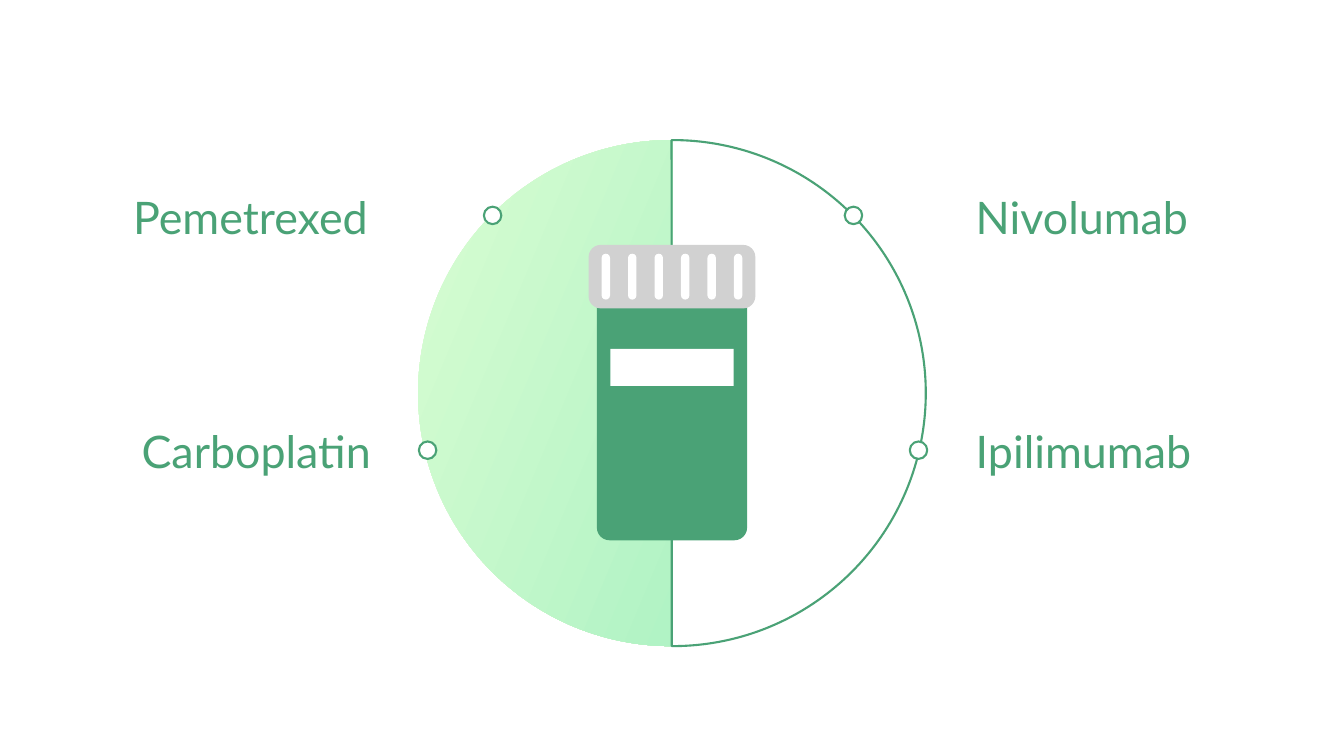
from dataclasses import dataclass
from pptx import Presentation, util as u
from pptx.dml.color import RGBColor
from pptx.enum import shapes, text

COLS, ROWS = 160, 90
SHAPE = shapes.MSO_SHAPE


@dataclass(frozen=True)
class Theme:
    green: str = "4AA276"
    grey: str = "D1D1D1"
    white: str = "FFFFFF"
    fade: tuple = ("E3FFD5", "90EBBA")
    font: str = "Lato"
    size: float = 32
    line: float = 1.5


T = Theme()


def grid(units):
    return u.Inches(units / 12)


def rgb(color):
    return RGBColor.from_string(color)


def add_centred(parent, kind, cx, cy, w, h, fill=None, line=None):
    sp = parent.shapes.add_shape(
        kind, grid(cx - w / 2), grid(cy - h / 2), grid(w), grid(h))
    sp.shadow.inherit = False
    if fill:
        sp.fill.solid()
        sp.fill.fore_color.rgb = rgb(fill)
    else:
        sp.fill.background()
    if line:
        sp.line.color.rgb = rgb(line)
        sp.line.width = u.Pt(T.line)
    else:
        sp.line.fill.background()
    return sp


def add_half_disc(s, cx, cy, size, tilt, line=None):
    sp = add_centred(s, SHAPE.CHORD, cx, cy, size, size, line=line)
    sp.adjustments[0], sp.adjustments[1] = 40.3, 148.61
    sp.rotation = tilt
    return sp


def add_rounded(parent, cx, cy, w, h, radius, fill):
    sp = add_centred(parent, SHAPE.ROUNDED_RECTANGLE, cx, cy, w, h, fill)
    sp.adjustments[0] = radius / min(w, h)


def add_label(s, left, cy, name, align, inset):
    w, h = 32.76, 8.76
    sp = s.shapes.add_textbox(grid(left), grid(cy - h / 2), grid(w), grid(h))
    tf = sp.text_frame
    tf.word_wrap = True
    tf.vertical_anchor = text.MSO_ANCHOR.MIDDLE
    tf.margin_left = tf.margin_right = u.Inches(inset)
    tf.margin_top = tf.margin_bottom = u.Inches(inset)
    p = tf.paragraphs[0]
    p.alignment = align
    r = p.add_run()
    r.text = name
    r.font.name = T.font
    r.font.size = u.Pt(T.size)
    r.font.color.rgb = rgb(T.green)


def add_circle(s, cx, cy, size):
    left = add_half_disc(s, cx - 0.1, cy, size, 22.6)
    left.fill.gradient()
    left.fill.gradient_angle = 0
    for stop, color in zip(left.fill.gradient_stops, T.fade):
        stop.color.rgb = rgb(color)
    right = add_half_disc(s, cx + 0.1, cy, size, 337.4, T.green)
    right.element.spPr.xfrm.set("flipH", "1")


def add_bottle(s, cx):
    bottle = s.shapes.add_group_shape()
    add_rounded(bottle, cx, 47.1, 17.88, 34.44, 1.5, T.green)
    add_rounded(bottle, cx, 32.94, 19.85, 7.56, 1.45, T.grey)
    ridges, pitch = 6, 3.15
    for i in range(ridges):
        x = cx + (i - (ridges - 1) / 2) * pitch
        add_rounded(bottle, x, 32.94, 1, 5.46, 0.5, T.white)
    add_centred(bottle, SHAPE.RECTANGLE, cx, 43.74, 14.7, 4.4, T.white)


def main():
    prs = Presentation()
    prs.slide_width, prs.slide_height = grid(COLS), grid(ROWS)
    s = prs.slides.add_slide(prs.slide_layouts[6])
    cx = COLS / 2
    add_circle(s, cx, 46.8, 60.24)
    drugs = [
        (25.65, 21.48, ("Pemetrexed", 0.13), ("Nivolumab", 0.13)),
        (53.6, 29.22, ("Carboplatin", 0.1), ("Ipilimumab", 0.13)),
    ]
    sides = [(-1, 12.6, text.PP_ALIGN.RIGHT), (1, 114.6, text.PP_ALIGN.LEFT)]
    for cy, reach, *labels in drugs:
        for (side, left, align), (name, inset) in zip(sides, labels):
            add_centred(s, SHAPE.OVAL, cx + 0.13 + side * reach, cy,
                        2.08, 2.08, T.white, T.green)
            add_label(s, left, cy + 0.1, name, align, inset)
    add_bottle(s, cx)
    prs.save("out.pptx")


if __name__ == "__main__":
    main()
